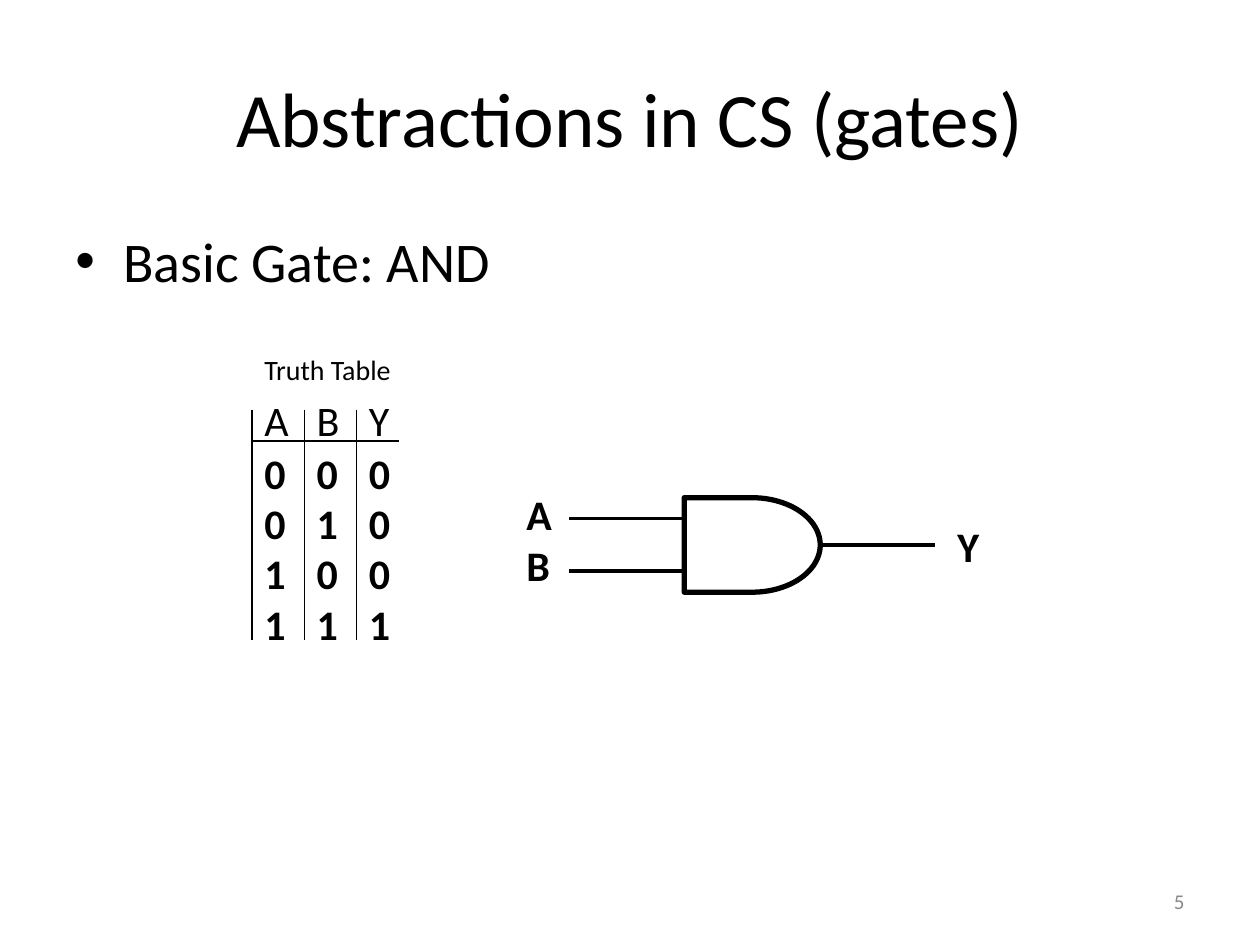
from lxml.etree import SubElement
from pptx import Presentation
from pptx.dml.color import RGBColor
from pptx.enum.shapes import MSO_CONNECTOR, MSO_SHAPE
from pptx.enum.text import MSO_ANCHOR, PP_ALIGN
from pptx.oxml.ns import qn
from pptx.util import Inches, Pt

BLACK = "000000"
GREY = "898989"


def color(hex_text):
    return RGBColor.from_string(hex_text)


def add_text(slide, box, text, size=24, bold=False, ink=BLACK,
             align=PP_ALIGN.LEFT, anchor=MSO_ANCHOR.TOP, wrap=False, bullet=None):
    label = slide.shapes.add_textbox(*map(Inches, box))
    frame = label.text_frame
    frame.word_wrap = wrap
    frame.vertical_anchor = anchor
    frame.text = text
    for paragraph in frame.paragraphs:
        paragraph.alignment = align
        font = paragraph.runs[0].font
        font.name = "Calibri"
        font.size = Pt(size)
        font.bold = bold
        font.color.rgb = color(ink)
        if bullet:
            properties = paragraph._p.get_or_add_pPr()
            properties.set("marL", str(Inches(0.38)))
            properties.set("indent", str(Inches(-0.38)))
            SubElement(properties, qn("a:buFont")).set("typeface", "Arial")
            SubElement(properties, qn("a:buChar")).set("char", bullet)


def add_line(slide, start, end, width):
    line = slide.shapes.add_connector(
        MSO_CONNECTOR.STRAIGHT, *map(Inches, (*start, *end)))
    line.line.color.rgb = color(BLACK)
    line.line.width = Pt(width)
    SubElement(line._element.spPr, qn("a:effectLst"))
    return line


def add_truth_table(slide, left, top, width, height):
    columns = {"A": "0011", "B": "0101", "Y": "0001"}
    pitch = 0.415
    rule_top = top + 0.5
    header_rule = top + 0.75
    add_text(slide, (left, top, 1.26, 0.37), "Truth Table", size=16)
    for index, (name, values) in enumerate(columns.items()):
        x = left + index * pitch
        add_line(slide, (x, rule_top), (x, top + height), 0.75)
        add_text(slide, (x, top + 0.33, 0.44, 0.5), name)
        add_text(slide, (x, header_rule, 0.37, 1.7), "\n".join(values), bold=True)
    add_line(slide, (left, header_rule), (left + width, header_rule), 0.75)


def add_and_gate(slide, left, top, width, height):
    gate_left, gate_width = left + 1.35, 1.08
    gate_top, gate_height = top + 0.12, 0.75
    middle = gate_top + gate_height / 2
    gate = slide.shapes.add_shape(
        MSO_SHAPE.FLOWCHART_DELAY,
        *map(Inches, (gate_left, gate_top, gate_width, gate_height)))
    gate.shadow.inherit = False
    gate.fill.background()
    gate.line.color.rgb = color(BLACK)
    gate.line.width = Pt(3)
    for offset in (-0.21, 0.21):
        y = middle + offset
        add_line(slide, (left + 0.44, y), (gate_left, y), 2.25)
    output = add_line(slide, (gate_left + gate_width, middle),
                      (left + 3.34, middle), 2.25)
    output.begin_connect(gate, 3)
    add_text(slide, (left, top, 0.44, height), "A\nB", bold=True)
    add_text(slide, (left + width - 0.44, top + 0.25, 0.44, 0.5), "Y", bold=True)


def add_headings(slide, left, top, width, height):
    add_text(slide, (left, top, width, 1.25), "Abstractions in CS (gates)", size=44,
             align=PP_ALIGN.CENTER, anchor=MSO_ANCHOR.MIDDLE, wrap=True)
    add_text(slide, (left, top + 1.45, width, height - 1.45), "Basic Gate: AND",
             size=32, wrap=True, bullet="•")


def add_page_number(slide, left, top, width, height):
    add_text(slide, (left, top, width, height), "5", size=12, ink=GREY,
             align=PP_ALIGN.RIGHT, anchor=MSO_ANCHOR.MIDDLE, wrap=True)


def main():
    deck = Presentation()
    deck.slide_width, deck.slide_height = Inches(10), Inches(7.5)
    slide = deck.slides.add_slide(deck.slide_layouts[6])
    add_page_number(slide, 7.17, 6.95, 2.33, 0.4)
    add_headings(slide, 0.5, 0.3, 9, 6.4)
    add_truth_table(slide, 2, 2.75, 1.17, 2.33)
    add_and_gate(slide, 4.08, 3.83, 3.86, 0.9)
    deck.save("out.pptx")


if __name__ == "__main__":
    main()
